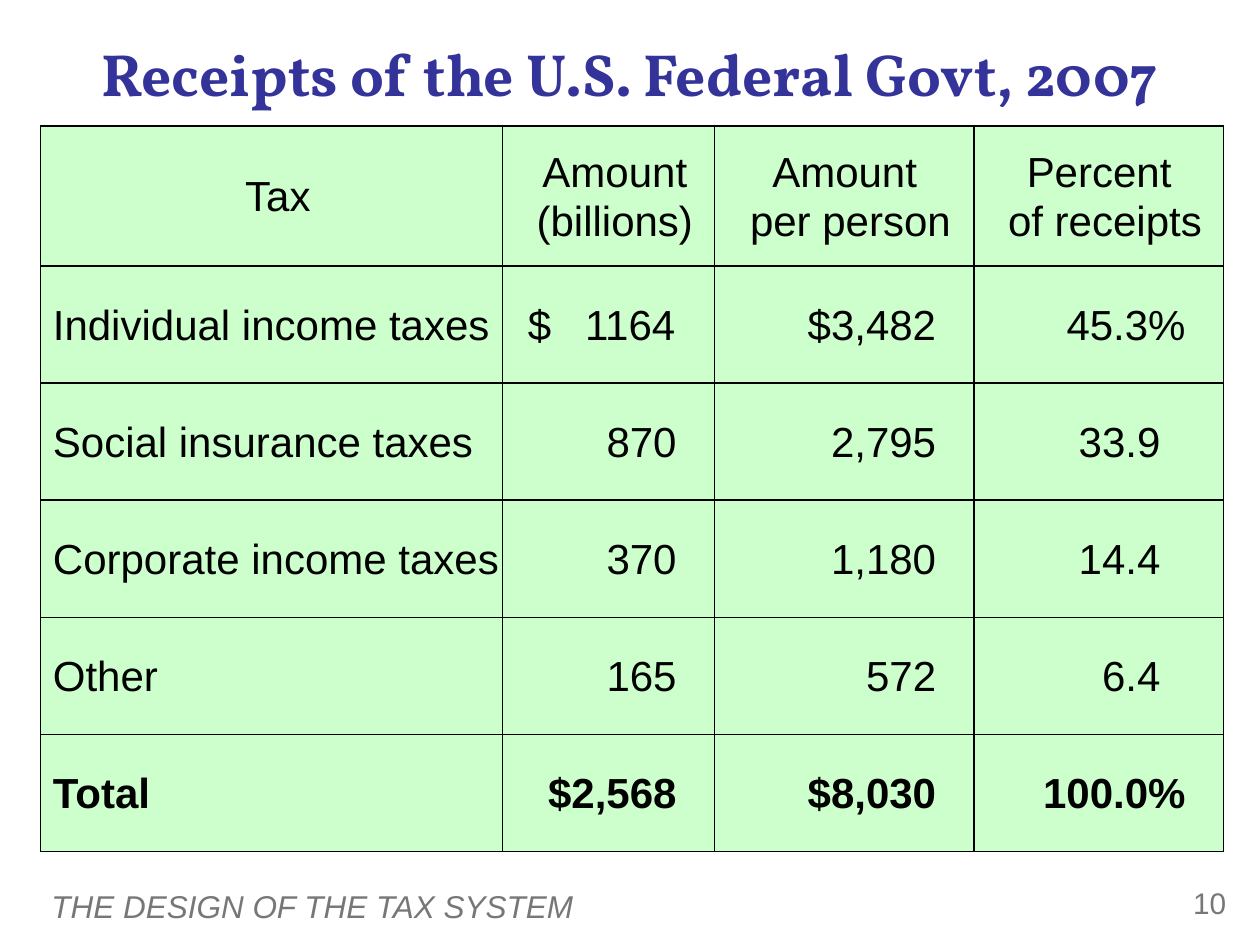
import pptx
import pptx.util
import pptx.dml.color
import pptx.enum.text
import pptx.oxml
import pptx.oxml.ns

Inches = pptx.util.Inches
Pt = pptx.util.Pt
RGBColor = pptx.dml.color.RGBColor
ALIGN = pptx.enum.text.PP_ALIGN
ANCHOR = pptx.enum.text.MSO_ANCHOR

BLACK = RGBColor(0x00, 0x00, 0x00)
GRAY = RGBColor(0x77, 0x77, 0x77)
NAVY = RGBColor(0x33, 0x33, 0x99)
MINT = RGBColor(0xCC, 0xFF, 0xCC)

COLUMN_WIDTHS = [3.67, 1.68, 2.06, 1.98]
ROW_HEIGHTS = [1.11] + [0.93] * 5
RECEIPTS = [
    ["Tax", "Amount (billions)", "Amount \nper person", "Percent \nof receipts"],
    ["Individual income taxes", "$\t1164", "$3,482", "45.3%"],
    ["Social insurance taxes", "870", "2,795", "33.9"],
    ["Corporate income taxes", "370", "1,180", "14.4"],
    ["Other", "165", "572", "6.4"],
    ["Total", "$2,568", "$8,030", "100.0%"],
]


def write(para, text, size, color, font="Arial", bold=False, italic=False):
    for index, line in enumerate(text.split("\n")):
        if index:
            para.add_line_break()
        span = para.add_run()
        span.text = line
        span.font.name = font
        span.font.size = Pt(size)
        span.font.color.rgb = color
        span.font.bold = bold
        span.font.italic = italic


def place(box, left, top, width, height):
    box.left, box.top = Inches(left), Inches(top)
    box.width, box.height = Inches(width), Inches(height)


def add_title(page, text):
    title = page.shapes.title
    place(title, 0.5, 0.22, 9, 0.71)
    title.text_frame.vertical_anchor = ANCHOR.MIDDLE
    para = title.text_frame.paragraphs[0]
    para.alignment = ALIGN.CENTER
    write(para, text, 34, NAVY, font="Vollkorn", bold=True)


def add_label(page, text, bounds, size, align, anchor, italic=False):
    box = page.shapes.add_textbox(*map(Inches, bounds))
    box.text_frame.word_wrap = True
    box.text_frame.vertical_anchor = anchor
    para = box.text_frame.paragraphs[0]
    para.alignment = align
    write(para, text, size, GRAY, italic=italic)


def add_borders(cell):
    properties = cell._tc.get_or_add_tcPr()
    for index, side in enumerate(("lnL", "lnR", "lnT", "lnB")):
        border = pptx.oxml.parse_xml(
            f'<a:{side} {pptx.oxml.ns.nsdecls("a")} w="{Pt(1)}">'
            f'<a:solidFill><a:srgbClr val="{BLACK}"/></a:solidFill></a:{side}>'
        )
        properties.insert(index, border)


def add_right_tab(para, position):
    tabs = pptx.oxml.parse_xml(
        f'<a:tabLst {pptx.oxml.ns.nsdecls("a")}>'
        f'<a:tab pos="{Inches(position)}" algn="r"/></a:tabLst>'
    )
    para._p.get_or_add_pPr().append(tabs)


def right_margin(row, column, text):
    if row == 0 or column == 0:
        return 0
    if column == 3 and not text.endswith("%"):
        return 0.5
    return 0.3


def fill_cell(cell, row, column, text):
    cell.fill.solid()
    cell.fill.fore_color.rgb = MINT
    add_borders(cell)
    cell.vertical_anchor = ANCHOR.MIDDLE
    cell.margin_left = Inches(0.1)
    cell.margin_top = cell.margin_bottom = Inches(0.05)
    cell.margin_right = Inches(right_margin(row, column, text))
    para = cell.text_frame.paragraphs[0]
    para.line_spacing = 1.05
    if row == 0:
        para.alignment = ALIGN.CENTER
    elif column == 0:
        para.alignment = ALIGN.LEFT
    elif "\t" in text:
        para.alignment = ALIGN.LEFT
        cell.margin_left = Inches(0.2)
        add_right_tab(para, 1.17)
    else:
        para.alignment = ALIGN.RIGHT
    write(para, text, 24, BLACK, bold=row == len(RECEIPTS) - 1)


def add_receipts_table(page):
    frame = page.shapes.add_table(
        len(ROW_HEIGHTS), len(COLUMN_WIDTHS), Inches(0.32), Inches(1),
        Inches(sum(COLUMN_WIDTHS)), Inches(sum(ROW_HEIGHTS)),
    )
    table = frame.table
    table.first_row = False
    table.horz_banding = False
    for column, width in zip(table.columns, COLUMN_WIDTHS):
        column.width = Inches(width)
    for row, height in zip(table.rows, ROW_HEIGHTS):
        row.height = Inches(height)
    for row, texts in enumerate(RECEIPTS):
        for column, text in enumerate(texts):
            fill_cell(table.cell(row, column), row, column, text)


def main():
    deck = pptx.Presentation()
    deck.slide_width, deck.slide_height = Inches(10), Inches(7.5)
    page = deck.slides.add_slide(deck.slide_layouts[5])
    add_label(page, "THE DESIGN OF THE TAX SYSTEM", (0.31, 6.99, 8.02, 0.4),
              18, ALIGN.LEFT, ANCHOR.MIDDLE, italic=True)
    add_label(page, "10", (9.08, 6.97, 0.75, 0.4), 17, ALIGN.RIGHT, ANCHOR.TOP)
    add_title(page, "Receipts of the U.S. Federal Govt, 2007")
    add_receipts_table(page)
    deck.save("out.pptx")


if __name__ == "__main__":
    main()
